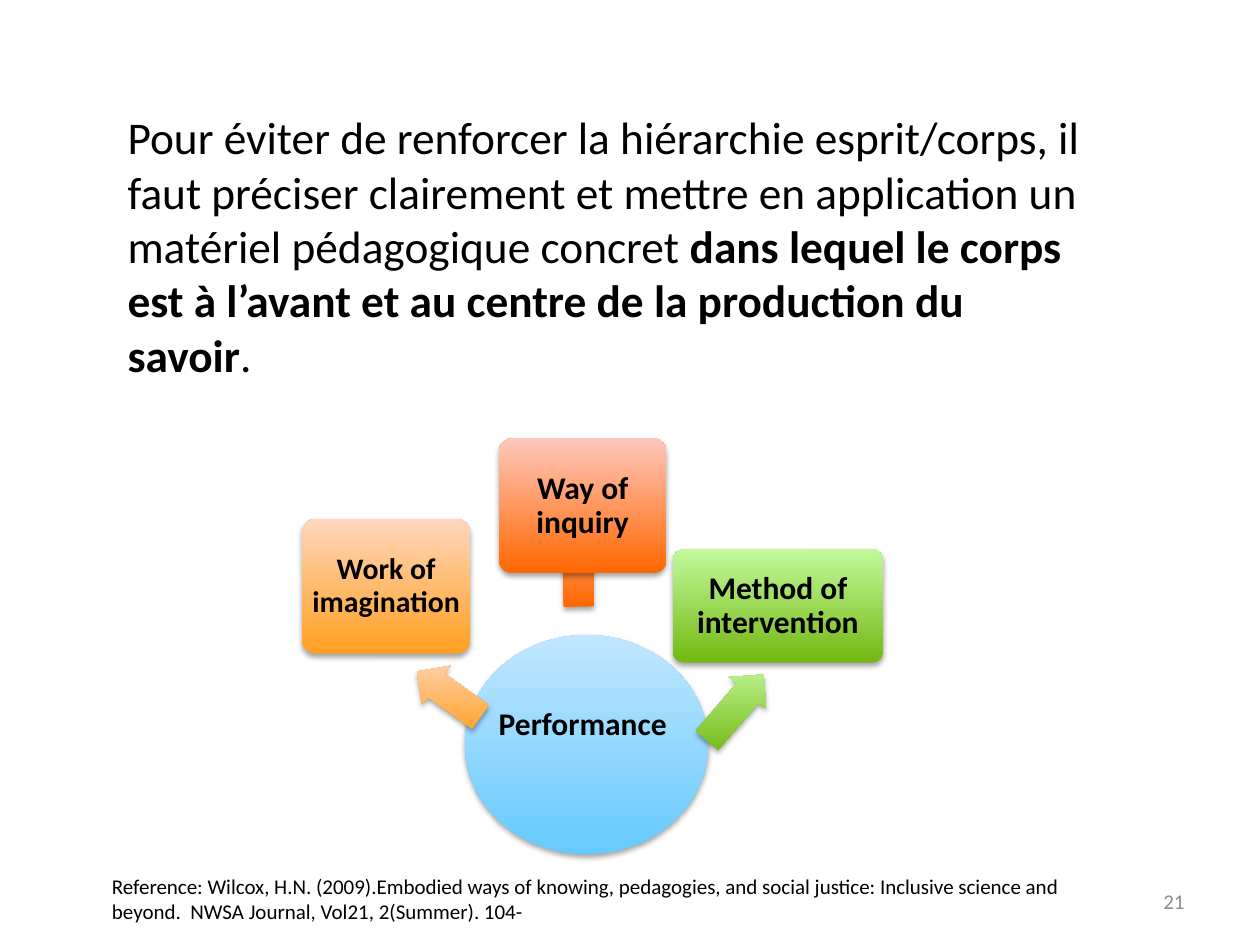
from dataclasses import dataclass

import lxml.etree
import pptx
import pptx.dml.color
import pptx.enum.shapes
import pptx.enum.text
import pptx.oxml.ns
import pptx.shapes.autoshape
import pptx.slide
import pptx.text.text
import pptx.util

Pt = pptx.util.Pt
RGB = pptx.dml.color.RGBColor
Kind = pptx.enum.shapes.MSO_SHAPE
Align = pptx.enum.text.PP_ALIGN
Mid = pptx.enum.text.MSO_ANCHOR.MIDDLE
qn = pptx.oxml.ns.qn

FONT = "Calibri"
BLACK = RGB(0x00, 0x00, 0x00)
GREY = RGB(0x8C, 0x8C, 0x8C)
BLUE = (RGB(0x66, 0xCA, 0xFF), RGB(0xC2, 0xE6, 0xFF))
AMBER = (RGB(0xFF, 0xA0, 0x21), RGB(0xFF, 0xD6, 0xBD))
RED = (RGB(0xFF, 0x67, 0x00), RGB(0xFF, 0xC7, 0xBD))
GREEN = (RGB(0x73, 0xB8, 0x12), RGB(0xC3, 0xF9, 0x9C))

Box = tuple[float, float, float, float]  # left, top, width, height in points
Pair = tuple[RGB, RGB]  # bottom and top colour


@dataclass
class Branch:
    label: str
    size: float
    card: Box
    arrow: Box
    turn: float
    tint: Pair


BRANCHES = [
    Branch("Work of imagination", 17, (172.8, 296.6, 95.8, 77),
           (234, 383, 44.6, 27.4), 35.5, AMBER),
    Branch("Way of inquiry", 18, (285.1, 250.6, 95.8, 77),
           (295.2, 297.4, 69.8, 28.8), 88.9, RED),
    Branch("Method of intervention", 18, (384.5, 313.9, 120.2, 64.8),
           (395.3, 390.2, 49.7, 28.1), 130.6, GREEN),
]


def add_run(para: pptx.text.text._Paragraph, text: str, size: float,
            bold: bool = False, ink: RGB = BLACK) -> None:
    run = para.add_run()
    run.text = text
    run.font.name = FONT
    run.font.size = Pt(size)
    run.font.bold = bold
    run.font.color.rgb = ink


def add_text(slide: pptx.slide.Slide, box: Box) -> pptx.text.text.TextFrame:
    frame = slide.shapes.add_textbox(*map(Pt, box)).text_frame
    frame.word_wrap = True
    return frame


def add_shape(slide: pptx.slide.Slide, kind: Kind, box: Box,
              tint: Pair) -> pptx.shapes.autoshape.Shape:
    shape = slide.shapes.add_shape(kind, *map(Pt, box))
    # The gradient stays upright when the shape turns
    shape.fill.gradient()
    shape.fill.gradient_angle = 90
    for stop, shade, place in zip(shape.fill.gradient_stops, tint, (0, 1)):
        stop.color.rgb = shade
        stop.position = place
    props = shape._element.spPr
    props.find(qn("a:gradFill")).set("rotWithShape", "0")
    shape.line.fill.background()
    # Soft shadow below the shape
    shape.shadow.inherit = False
    glow = lxml.etree.SubElement(
        props.find(qn("a:effectLst")), qn("a:outerShdw"),
        blurRad=str(Pt(3.1)), dist=str(Pt(1.8)), dir="5400000",
        rotWithShape="0")
    shade = lxml.etree.SubElement(glow, qn("a:srgbClr"), val="000000")
    lxml.etree.SubElement(shade, qn("a:alpha"), val="35000")
    return shape


def add_branch(slide: pptx.slide.Slide, branch: Branch) -> None:
    arrow = add_shape(slide, Kind.LEFT_ARROW, branch.arrow, branch.tint)
    arrow.adjustments[0] = 0.6
    arrow.adjustments[1] = 0.5
    arrow.rotation = branch.turn

    card = add_shape(slide, Kind.ROUNDED_RECTANGLE, branch.card, branch.tint)
    card.adjustments[0] = 0.1
    # Narrow side margins, as the round corners also inset the text
    frame = card.text_frame
    frame.word_wrap = True
    frame.vertical_anchor = Mid
    frame.margin_left = frame.margin_right = Pt(1)
    frame.margin_top = frame.margin_bottom = Pt(3)
    para = frame.paragraphs[0]
    para.alignment = Align.CENTER
    para.line_spacing = 0.9
    add_run(para, branch.label, branch.size, bold=True)


def main() -> None:
    deck = pptx.Presentation()
    deck.slide_width, deck.slide_height = Pt(720), Pt(540)
    slide = deck.slides.add_slide(deck.slide_layouts[6])

    # Page number
    frame = add_text(slide, (516.2, 500.4, 167.8, 28.8))
    frame.vertical_anchor = Mid
    frame.paragraphs[0].alignment = Align.RIGHT
    add_run(frame.paragraphs[0], "21", 12, ink=GREY)

    # Reference
    frame = add_text(slide, (56.9, 495.4, 568.1, 36))
    add_run(frame.paragraphs[0],
            "Reference: Wilcox, H.N. (2009).Embodied ways of knowing, "
            "pedagogies, and social justice: Inclusive science and beyond.  "
            "NWSA Journal, Vol21, 2(Summer). 104-", 12)

    # Diagram: a hub with three branches
    add_shape(slide, Kind.OVAL, (265.7, 362.9, 139, 125.3), BLUE)
    for branch in BRANCHES:
        add_branch(slide, branch)
    frame = add_text(slide, (277.9, 398.9, 126, 28.8))
    add_run(frame.paragraphs[0], "Performance", 18, bold=True)

    # Main statement
    frame = add_text(slide, (56.9, 59, 576.7, 156.2))
    frame.margin_left = Pt(16)
    frame.margin_right = Pt(13)
    para = frame.paragraphs[0]
    add_run(para, "Pour éviter de renforcer la hiérarchie esprit/corps, il "
            "faut préciser clairement et mettre en application un matériel "
            "pédagogique concret ", 25.9)
    add_run(para, "dans lequel le corps est à l’avant et au centre de la "
            "production du savoir", 25.9, bold=True)
    add_run(para, ".", 25.9)

    deck.save("out.pptx")


if __name__ == "__main__":
    main()
